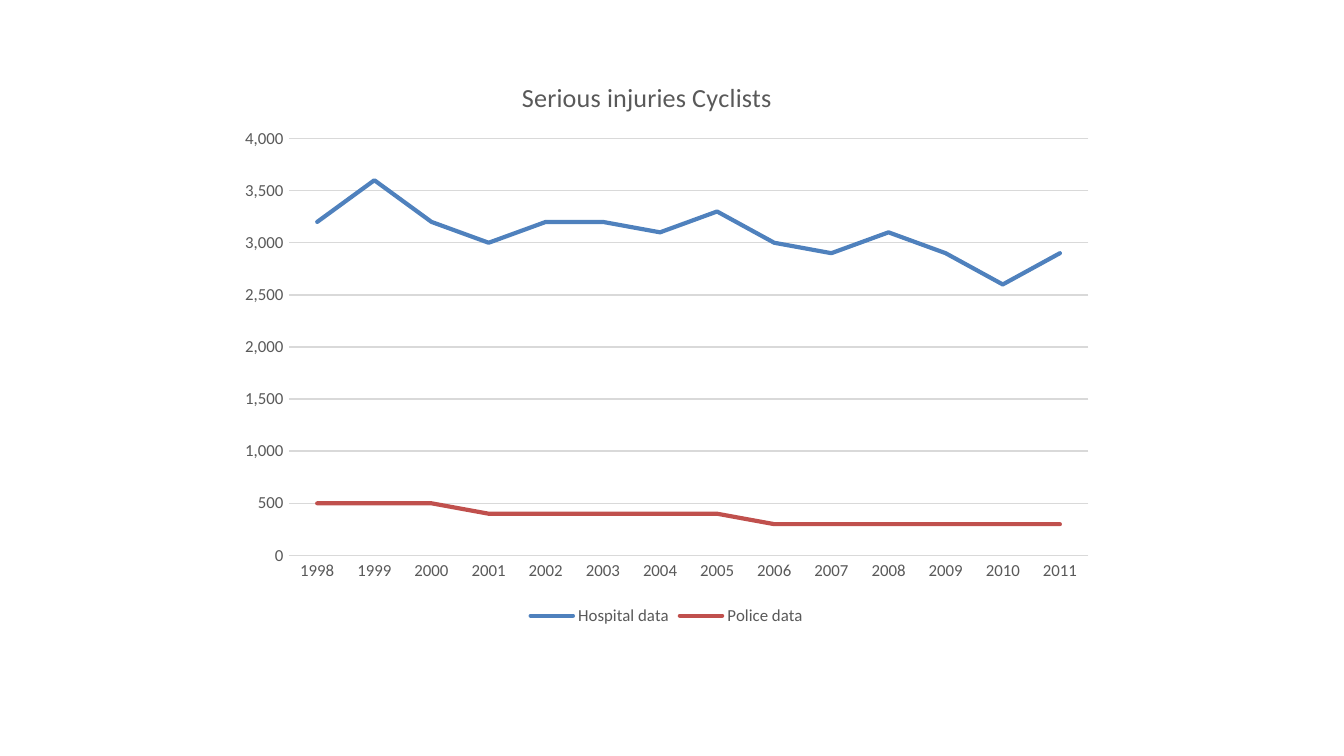
from dataclasses import dataclass

from pptx import Presentation
from pptx.chart.data import CategoryChartData
from pptx.dml.color import RGBColor
from pptx.enum.chart import XL_CHART_TYPE, XL_LEGEND_POSITION, XL_TICK_MARK
from pptx.oxml import parse_xml
from pptx.oxml.ns import nsdecls
from pptx.util import Pt

LINE = XL_CHART_TYPE.LINE
BOTTOM = XL_LEGEND_POSITION.BOTTOM
NO_TICK = XL_TICK_MARK.NONE
BLANK_LAYOUT = 6
FONT = "Calibri"
COLORS = {"text": "595959", "grid": "D9D9D9", "hospital": "4F81BD", "police": "C0504D"}


@dataclass
class InjurySeries:
    name: str
    color: str
    values: tuple[int, ...]


YEARS = [str(year) for year in range(1998, 2012)]
SERIES = [
    InjurySeries("Hospital data", "hospital",
                 (3200, 3600, 3200, 3000, 3200, 3200, 3100,
                  3300, 3000, 2900, 3100, 2900, 2600, 2900)),
    InjurySeries("Police data", "police",
                 (500, 500, 500, 400, 400, 400, 400,
                  400, 300, 300, 300, 300, 300, 300)),
]


def style_font(font, size: float) -> None:
    font.name = FONT
    font.size = Pt(size)
    font.bold = False
    font.color.rgb = RGBColor.from_string(COLORS["text"])


def style_line(line, color: str, width: float) -> None:
    line.color.rgb = RGBColor.from_string(COLORS[color])
    line.width = Pt(width)


def style_axis(axis) -> None:
    axis.major_tick_mark = NO_TICK
    axis.minor_tick_mark = NO_TICK
    style_font(axis.tick_labels.font, 9)


def place_part(part, index: int, target: str, **fractions: float) -> None:
    """Place a chart part by fractions of the chart's size."""
    for old_layout in part.findall("{*}layout"):
        part.remove(old_layout)
    values = "".join(f'<c:{key} val="{value}"/>' for key, value in fractions.items())
    part.insert(index, parse_xml(
        f'<c:layout {nsdecls("c")}><c:manualLayout>{target}'
        f'<c:xMode val="edge"/><c:yMode val="edge"/>{values}'
        '</c:manualLayout></c:layout>'))


def add_injury_chart(page) -> None:
    data = CategoryChartData(number_format="#,##0")
    data.categories = YEARS
    for item in SERIES:
        data.add_series(item.name, item.values)
    chart = page.shapes.add_chart(
        LINE, Pt(121.68), Pt(27.7), Pt(470.88), Pt(310.32), data).chart
    style_font(chart.font, 10)

    # Title and legend
    chart.has_title = True
    title = chart.chart_title
    title.include_in_layout = False
    para = title.text_frame.paragraphs[0]
    para.text = "Serious injuries Cyclists"
    style_font(para.font, 14)
    place_part(title._element, 1, "", x=0.33, y=0.04)
    chart.has_legend = True
    chart.legend.position = BOTTOM
    chart.legend.include_in_layout = False
    style_font(chart.legend.font, 9)

    # Axes and gridlines
    years, counts = chart.category_axis, chart.value_axis
    style_axis(years)
    style_line(years.format.line, "grid", 0.75)
    style_axis(counts)
    counts.minimum_scale, counts.maximum_scale, counts.major_unit = 0, 4000, 500
    counts.tick_labels.number_format = "#,##0"
    counts.tick_labels.number_format_is_linked = False
    counts.format.line.fill.background()
    style_line(counts.major_gridlines.format.line, "grid", 0.75)

    # Data lines
    plot = chart.plots[0]
    plot.vary_by_categories = False
    for item, series in zip(SERIES, plot.series):
        series.smooth = False
        style_line(series.format.line, item.color, 2.25)
        series.format.line._get_or_add_ln().set("cap", "rnd")
    place_part(plot._element.getparent(), 0, '<c:layoutTarget val="inner"/>',
               x=0.07, y=0.15, w=0.91, h=0.72)


def main() -> None:
    deck = Presentation()
    deck.slide_width, deck.slide_height = Pt(720), Pt(405)
    page = deck.slides.add_slide(deck.slide_layouts[BLANK_LAYOUT])
    add_injury_chart(page)
    deck.save("out.pptx")


if __name__ == "__main__":
    main()
